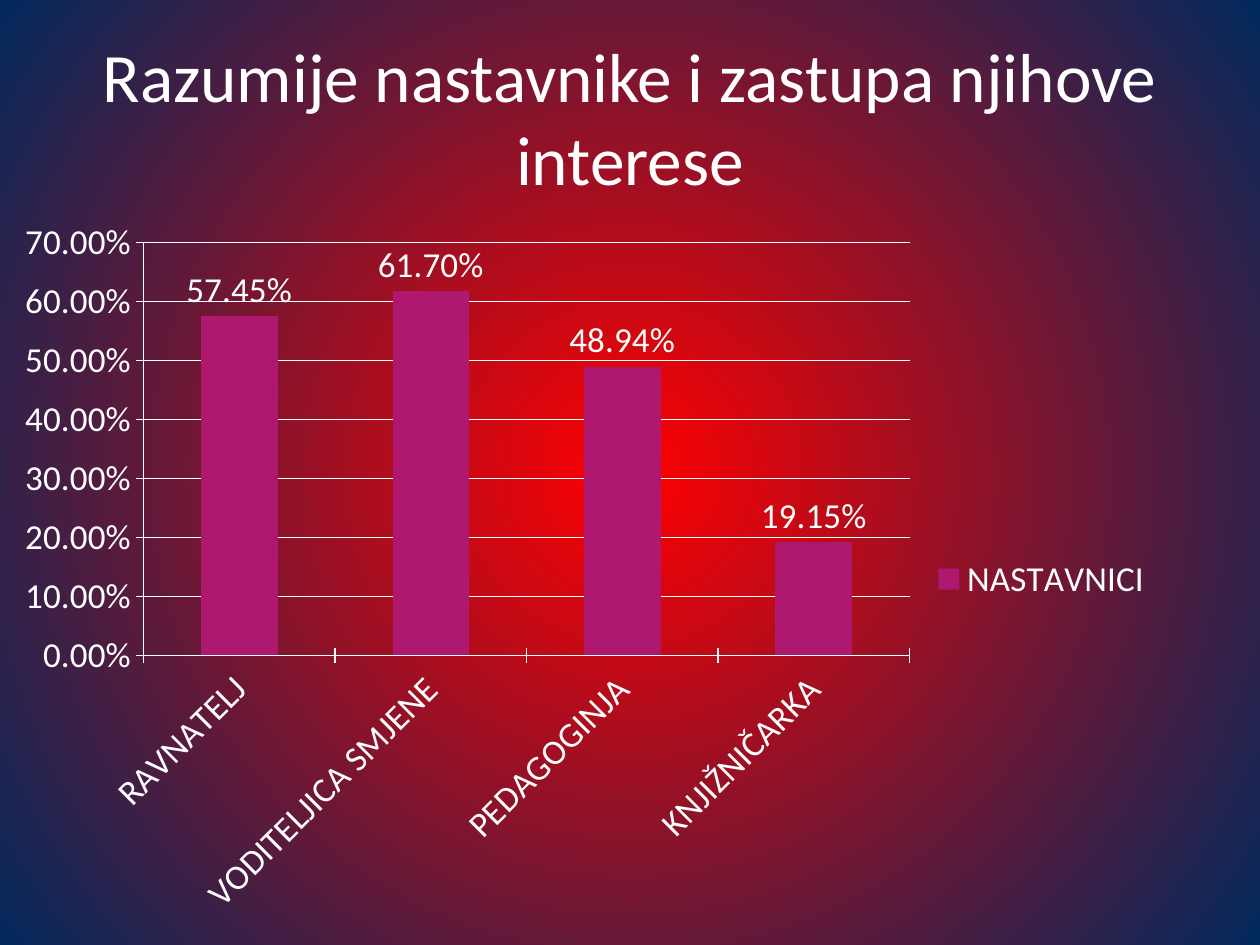
from lxml import etree
from pptx import Presentation
from pptx.chart.data import CategoryChartData
from pptx.dml.color import RGBColor
from pptx.enum.chart import XL_CHART_TYPE, XL_LABEL_POSITION, XL_LEGEND_POSITION, XL_TICK_MARK
from pptx.enum.text import MSO_ANCHOR, PP_ALIGN
from pptx.oxml.ns import qn
from pptx.util import Cm, Pt

COLUMNS = XL_CHART_TYPE.COLUMN_CLUSTERED
OUTSIDE_END = XL_LABEL_POSITION.OUTSIDE_END
LEGEND_RIGHT = XL_LEGEND_POSITION.RIGHT
TICK_CROSS = XL_TICK_MARK.CROSS
TICK_NONE = XL_TICK_MARK.NONE
MIDDLE = MSO_ANCHOR.MIDDLE
CENTER = PP_ALIGN.CENTER

WHITE = RGBColor(0xFF, 0xFF, 0xFF)
RED = RGBColor(0xFF, 0x00, 0x00)
NAVY = RGBColor(0x00, 0x29, 0x5C)
MAGENTA = RGBColor(0xAE, 0x18, 0x6E)

FONT = "Calibri"
PERCENT = "0.00%"
TITLE = "Razumije nastavnike i zastupa njihove interese"
SERIES_NAME = "NASTAVNICI"
RATINGS = {
    "RAVNATELJ": 0.5745,
    "VODITELJICA SMJENE": 0.617,
    "PEDAGOGINJA": 0.4894,
    "KNJIŽNIČARKA": 0.1915,
}


def style_font(font, size):
    font.name = FONT
    font.size = Pt(size)
    font.color.rgb = WHITE


def set_radial_background(slide, inner, outer):
    fill = slide.background.fill
    fill.gradient()
    for stop, position, color in zip(fill.gradient_stops, (0, 1), (inner, outer)):
        stop.position = position
        stop.color.rgb = color
    gradient = slide.background._cSld.find(".//" + qn("a:gradFill"))
    gradient.remove(gradient.find(qn("a:lin")))
    path = etree.SubElement(gradient, qn("a:path"), {"path": "circle"})
    etree.SubElement(path, qn("a:fillToRect"), dict.fromkeys("ltrb", "50000"))


def add_title(slide, text):
    box = slide.shapes.add_textbox(Cm(1.27), Cm(0.76), Cm(22.86), Cm(3.18))
    frame = box.text_frame
    frame.word_wrap = True
    frame.vertical_anchor = MIDDLE
    paragraph = frame.paragraphs[0]
    paragraph.text = text
    paragraph.alignment = CENTER
    style_font(paragraph.font, 39.6)


def set_layout(parent, index, x, y, width, height, inner=False):
    """Place a chart part by fractions of the chart's size."""
    for old in parent.findall(qn("c:layout")):
        parent.remove(old)
    layout = etree.Element(qn("c:layout"))
    manual = etree.SubElement(layout, qn("c:manualLayout"))
    settings = {"xMode": "edge", "yMode": "edge", "x": x, "y": y, "w": width, "h": height}
    if inner:
        settings = {"layoutTarget": "inner", **settings}
    for name, value in settings.items():
        etree.SubElement(manual, qn("c:" + name), val=str(value))
    parent.insert(index, layout)


def style_axis(axis):
    axis.major_tick_mark = TICK_CROSS
    axis.minor_tick_mark = TICK_NONE
    axis.format.line.color.rgb = WHITE
    style_font(axis.tick_labels.font, 20)


def style_axes(chart):
    category_axis, value_axis = chart.category_axis, chart.value_axis
    style_axis(category_axis)
    style_axis(value_axis)
    category_axis.has_major_gridlines = False
    category_labels = category_axis._element.find(qn("c:txPr"))
    category_labels.find(qn("a:bodyPr")).set("rot", "-2700000")
    value_axis.minimum_scale = 0
    value_axis.maximum_scale = 0.7
    value_axis.major_unit = 0.1
    value_axis.has_major_gridlines = True
    value_axis.major_gridlines.format.line.color.rgb = WHITE
    value_axis.tick_labels.number_format = PERCENT
    value_axis.tick_labels.number_format_is_linked = False


def style_columns(plot):
    plot.gap_width = 150
    plot.vary_by_categories = False
    fill = plot.series[0].format.fill
    fill.solid()
    fill.fore_color.rgb = MAGENTA
    plot.has_data_labels = True
    labels = plot.data_labels
    labels.show_value = True
    labels.number_format = PERCENT
    labels.number_format_is_linked = False
    labels.position = OUTSIDE_END
    style_font(labels.font, 20)


def add_legend(chart):
    chart.has_legend = True
    legend = chart.legend
    legend.position = LEGEND_RIGHT
    legend.include_in_layout = False
    style_font(legend.font, 20)
    set_layout(legend._element, 1, 0.75, 0.45, 0.24, 0.09)


def add_ratings_chart(slide):
    data = CategoryChartData(number_format=PERCENT)
    data.categories = list(RATINGS)
    data.add_series(SERIES_NAME, list(RATINGS.values()))
    frame = slide.shapes.add_chart(COLUMNS, Cm(0), Cm(4.45), Cm(24.13), Cm(14.6), data)
    chart = frame.chart
    chart.has_title = False
    style_font(chart.font, 20)
    style_axes(chart)
    style_columns(chart.plots[0])
    add_legend(chart)
    plot_area = chart._chartSpace.find(".//" + qn("c:plotArea"))
    set_layout(plot_area, 0, 0.12, 0.03, 0.64, 0.57, inner=True)


def main():
    presentation = Presentation()
    presentation.slide_width = Cm(25.4)
    presentation.slide_height = Cm(19.05)
    slide = presentation.slides.add_slide(presentation.slide_layouts[6])
    set_radial_background(slide, RED, NAVY)
    add_title(slide, TITLE)
    add_ratings_chart(slide)
    presentation.save("out.pptx")


if __name__ == "__main__":
    main()
